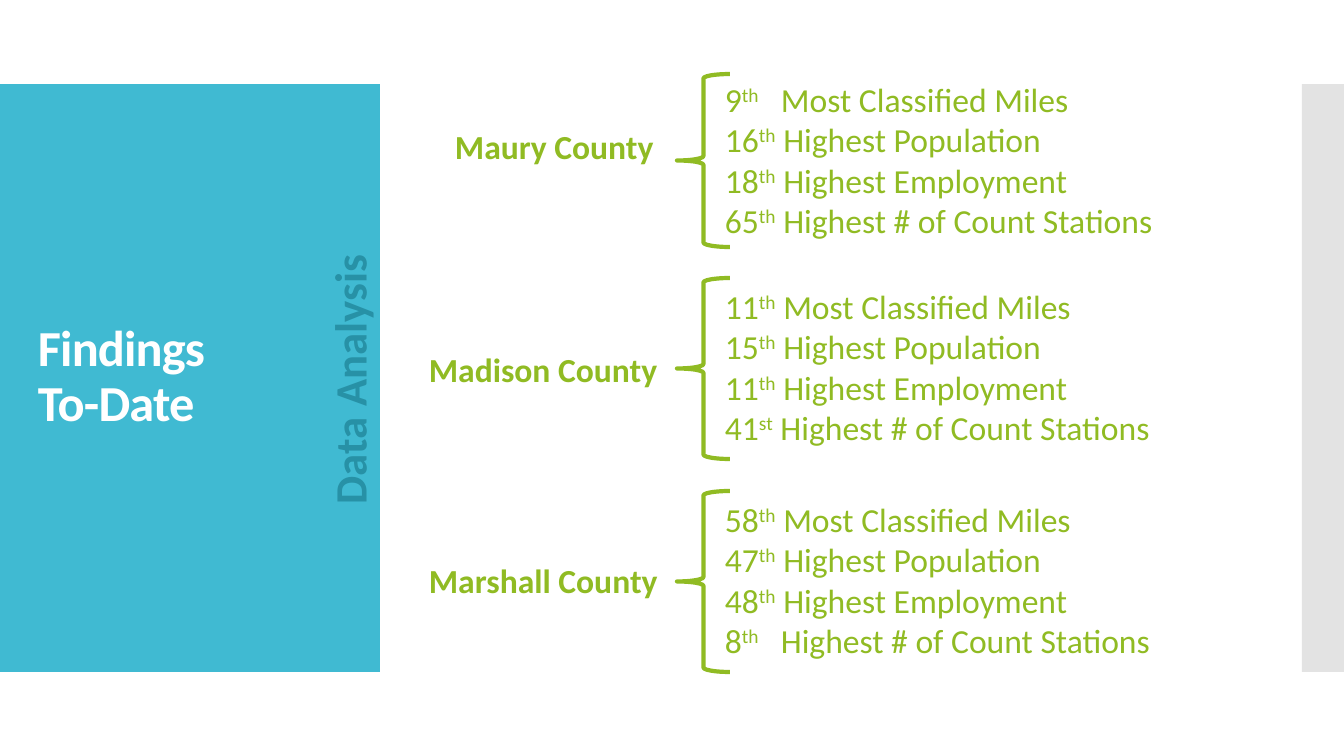
from dataclasses import dataclass

from pptx import Presentation
from pptx.dml.color import RGBColor
from pptx.enum.shapes import MSO_SHAPE as Preset
from pptx.enum.text import MSO_ANCHOR as Anchor, PP_ALIGN as Align
from pptx.oxml.ns import qn
from pptx.util import Pt
from lxml.etree import SubElement

TITLE = "Findings\vTo-Date"
SECTION = "Data Analysis"
MEASURES = (
    "Most Classified Miles",
    "Highest Population",
    "Highest Employment",
    "Highest # of Count Stations",
)
COUNTIES = [
    {"name": "Maury County", "ranks": ("9th", "16th", "18th", "65th"),
     "label": (445, 121, 233), "brace": (74, 173), "list_top": 74},
    {"name": "Madison County", "ranks": ("11th", "15th", "11th", "41st"),
     "label": (419, 344, 264), "brace": (278, 181), "list_top": 281},
    {"name": "Marshall County", "ranks": ("58th", "47th", "48th", "8th"),
     "label": (419, 555, 265), "brace": (491, 181), "list_top": 494},
]


@dataclass(frozen=True)
class Theme:
    font: str = "Calibri"
    panel: str = "40BAD2"
    edge: str = "C8C8C8"
    title: str = "FFFFFF"
    section: str = "2791A6"
    county: str = "90BB23"
    title_size: int = 36
    section_size: int = 32
    body_size: int = 24
    brace_width: int = 3


THEME = Theme()
EMU_PER_PX = 914400 / 100.8
SLIDE_W, SLIDE_H = 1344, 756
PANEL_TOP, PANEL_H = 84, 588
PANEL_W, EDGE_W = 380, 42
BRACE_LEFT, BRACE_W = 677, 53
LIST_LEFT, LIST_W, LIST_H = 715, 479, 173
LABEL_H = 50
MEASURE_INDENT = 56


def px(length):
    return round(length * EMU_PER_PX)


def add_preset(slide, preset, box, fill=None, alpha=None, line=None):
    shape = slide.shapes.add_shape(preset, *map(px, box))
    shape.shadow.inherit = False
    if fill:
        shape.fill.solid()
        shape.fill.fore_color.rgb = RGBColor.from_string(fill)
    else:
        shape.fill.background()
    if alpha:
        color = shape.fill._xPr.find(".//" + qn("a:srgbClr"))
        SubElement(color, qn("a:alpha"), val=str(alpha * 1000))
    if line:
        shape.line.color.rgb = RGBColor.from_string(line)
        shape.line.width = Pt(THEME.brace_width)
    else:
        shape.line.fill.background()


def add_text(slide, paragraphs, box, *, size, color, bold=False, align=Align.LEFT,
             anchor=Anchor.TOP, leading=None, before=None, tracking=None,
             rotation=0, tab=None):
    textbox = slide.shapes.add_textbox(*map(px, box))
    textbox.rotation = rotation
    frame = textbox.text_frame
    frame.word_wrap = True
    frame.vertical_anchor = anchor
    for index, pieces in enumerate(paragraphs):
        paragraph = frame.paragraphs[0] if index == 0 else frame.add_paragraph()
        paragraph.alignment = align
        if leading:
            paragraph.line_spacing = leading
        if before:
            paragraph.space_before = Pt(before)
        if tab:
            stops = SubElement(paragraph._p.get_or_add_pPr(), qn("a:tabLst"))
            SubElement(stops, qn("a:tab"), pos=str(px(tab)), algn="l")
        for words, baseline in pieces:
            for number, part in enumerate(words.split("\v")):
                if number:
                    paragraph.add_line_break()
                run = paragraph.add_run()
                run.text = part
                font = run.font
                font.name, font.size, font.bold = THEME.font, Pt(size), bold
                font.color.rgb = RGBColor.from_string(color)
                if baseline:
                    font._element.set("baseline", str(baseline * 1000))
                if tracking:
                    font._element.set("spc", str(tracking))


def ranked_line(rank, measure):
    number, suffix = rank[:-2], rank[-2:]
    gap = "\t" if len(number) == 1 else " "
    return [(number, 0), (suffix, 30), (gap + measure, 0)]


def add_county(slide, county):
    left, top, width = county["label"]
    add_text(slide, [[(county["name"], 0)]], (left, top, width, LABEL_H),
             size=THEME.body_size, color=THEME.county, bold=True)
    brace_top, brace_h = county["brace"]
    add_preset(slide, Preset.LEFT_BRACE, (BRACE_LEFT, brace_top, BRACE_W, brace_h),
               line=THEME.county)
    lines = [ranked_line(*pair) for pair in zip(county["ranks"], MEASURES)]
    add_text(slide, lines, (LIST_LEFT, county["list_top"], LIST_W, LIST_H),
             size=THEME.body_size, color=THEME.county, tab=MEASURE_INDENT)


def main():
    deck = Presentation()
    deck.slide_width, deck.slide_height = px(SLIDE_W), px(SLIDE_H)
    slide = deck.slides.add_slide(deck.slide_layouts[6])
    add_preset(slide, Preset.RECTANGLE, (0, PANEL_TOP, PANEL_W, PANEL_H), fill=THEME.panel)
    add_preset(slide, Preset.RECTANGLE, (SLIDE_W - EDGE_W, PANEL_TOP, EDGE_W, PANEL_H),
               fill=THEME.edge, alpha=50)
    add_text(slide, [[(TITLE, 0)]], (28, 124, 325, 507), size=THEME.title_size,
             color=THEME.title, bold=True, anchor=Anchor.MIDDLE, leading=0.9, tracking=-60)
    add_text(slide, [[(SECTION, 0)]], (60, 350, 585, 59), size=THEME.section_size,
             color=THEME.section, bold=True, align=Align.CENTER, leading=0.9,
             before=12, rotation=270)
    for county in COUNTIES:
        add_county(slide, county)
    deck.save("out.pptx")


if __name__ == "__main__":
    main()
